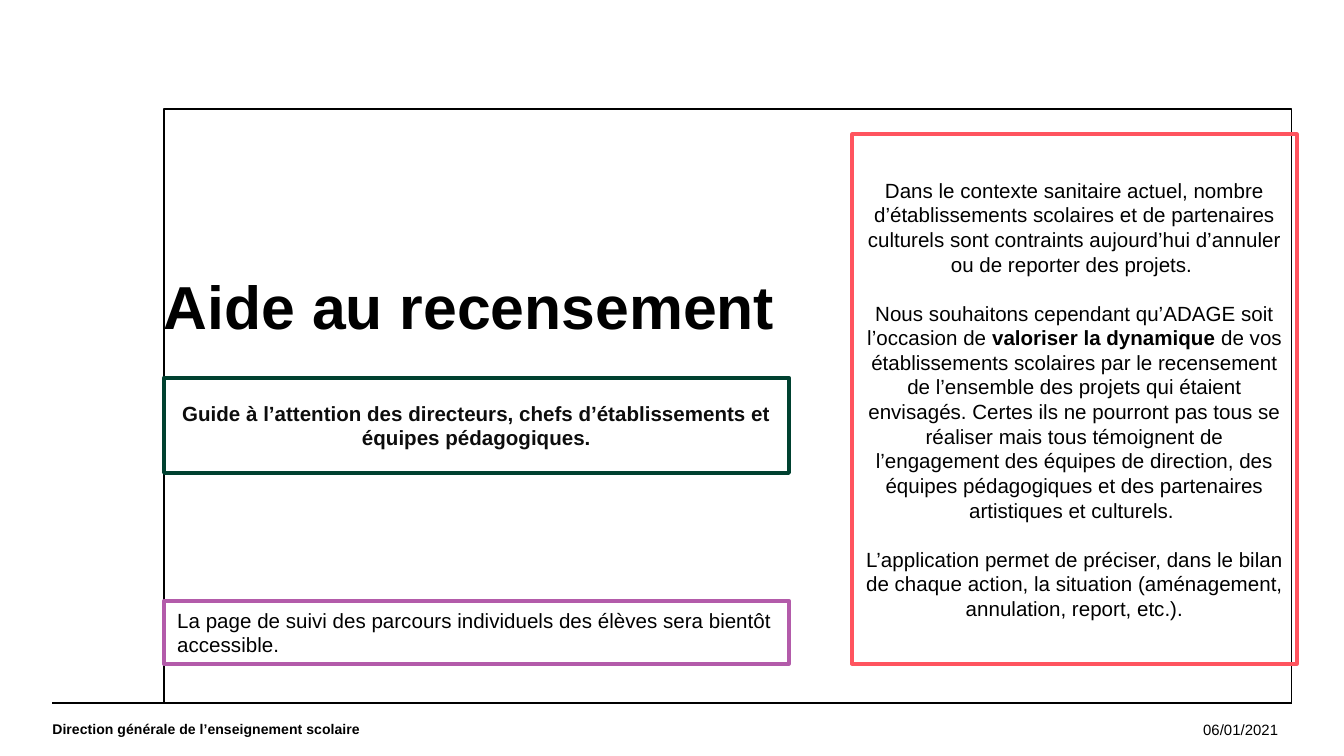
import pptx
import pptx.dml.color
import pptx.enum.shapes
import pptx.enum.text
import pptx.oxml.ns
import pptx.util
from lxml import etree

Inches = pptx.util.Inches
Pt = pptx.util.Pt
ALIGN = pptx.enum.text.PP_ALIGN
MIDDLE = pptx.enum.text.MSO_ANCHOR.MIDDLE
BLACK = "000000"


def color(value):
    return pptx.dml.color.RGBColor.from_string(value)


def write(frame, paragraphs, size=11, bold=False, ink=BLACK, align=ALIGN.LEFT,
          gap=0, spacing=None, margins=(0.1, 0.05, 0.1, 0.05)):
    frame.word_wrap = True
    frame.auto_size = pptx.enum.text.MSO_AUTO_SIZE.NONE
    frame.vertical_anchor = MIDDLE
    (frame.margin_left, frame.margin_top,
     frame.margin_right, frame.margin_bottom) = map(Inches, margins)
    for index, pieces in enumerate(paragraphs):
        paragraph = frame.add_paragraph() if index else frame.paragraphs[0]
        paragraph.alignment = align
        paragraph.space_before = Pt(gap if index else 0)
        paragraph.line_spacing = spacing
        for position, text in enumerate(pieces):
            run = paragraph.add_run()
            run.text = text
            run.font.name = "Arial"
            run.font.size = Pt(size)
            run.font.bold = bold or position % 2 == 1
            run.font.color.rgb = color(ink)


class SlideBuilder:
    rule_width = 0.8
    frame_width = 2

    def __init__(self, slide):
        self.slide = slide

    def outline(self, shape, ink, width):
        shape.line.color.rgb = color(ink)
        shape.line.width = Pt(width)

    def title(self, text, box, **style):
        title = self.slide.shapes.title
        title.left, title.top, title.width, title.height = map(Inches, box)
        self.outline(title, BLACK, self.rule_width)
        write(title.text_frame, [[text]], **style)

    def rule(self, left, right, top):
        rule = self.slide.shapes.add_connector(
            pptx.enum.shapes.MSO_CONNECTOR.STRAIGHT,
            Inches(left), Inches(top), Inches(right), Inches(top))
        self.outline(rule, BLACK, self.rule_width)
        properties = rule.element.find(pptx.oxml.ns.qn("p:spPr"))
        etree.SubElement(properties, pptx.oxml.ns.qn("a:effectLst"))

    def text(self, text, box, **style):
        shape = self.slide.shapes.add_textbox(*map(Inches, box))
        write(shape.text_frame, [[text]], **style)

    def panel(self, paragraphs, box, border, fill=None, **style):
        shape = self.slide.shapes.add_shape(
            pptx.enum.shapes.MSO_SHAPE.RECTANGLE, *map(Inches, box))
        shape.shadow.inherit = False
        if fill:
            shape.fill.solid()
            shape.fill.fore_color.rgb = color(fill)
        else:
            shape.fill.background()
        self.outline(shape, border, self.frame_width)
        write(shape.text_frame, paragraphs, **style)


def main():
    presentation = pptx.Presentation()
    presentation.slide_width = Inches(10)
    presentation.slide_height = Inches(10 * 9 / 16)
    builder = SlideBuilder(
        presentation.slides.add_slide(presentation.slide_layouts[5]))

    edge, left, right, bottom = 0.39, 1.22, 9.61, 5.23
    column = 4.65

    builder.title("Aide au recensement", (left, 0.81, right - left, bottom - 0.81),
                  size=32.5, bold=True, spacing=0.9, margins=(0, 0, 0, 1.43))
    builder.rule(edge, right, bottom)
    builder.text("06/01/2021", (8.33, bottom, 1.28, edge), size=8, align=ALIGN.RIGHT)
    builder.text("Direction générale de l’enseignement scolaire",
                 (edge, bottom, 6.46, edge), size=7.5, bold=True,
                 margins=(0, 0, 0, 0))

    builder.panel(
        [["Guide à l’attention des directeurs, chefs d’établissements et "
          "équipes pédagogiques."]],
        (left, 2.81, column, 0.71), "004130", fill="FFFFFF",
        bold=True, ink="0D0D0D", align=ALIGN.CENTER)
    builder.panel(
        [["Dans le contexte sanitaire actuel, nombre d’établissements scolaires "
          "et de partenaires culturels sont contraints aujourd’hui d’annuler ou "
          "de reporter des projets. "],
         ["Nous souhaitons cependant qu’ADAGE soit l’occasion de ",
          "valoriser la dynamique ",
          "de vos établissements scolaires par le recensement de l’ensemble des "
          "projets qui étaient envisagés. Certes ils ne pourront pas tous se "
          "réaliser mais tous témoignent de l’engagement des équipes de "
          "direction, des équipes pédagogiques et des partenaires artistiques "
          "et culturels. "],
         ["L’application permet de préciser, dans le bilan de chaque action, la "
          "situation (aménagement, annulation, report, etc.)."]],
        (6.34, 1, 3.31, 3.94), "FF545F", align=ALIGN.CENTER, gap=13)
    builder.panel(
        [["La page de suivi des parcours individuels des élèves sera bientôt "
          "accessible."]],
        (left, 4.47, column, 0.47), "B35BAA")

    presentation.save("out.pptx")


if __name__ == "__main__":
    main()
